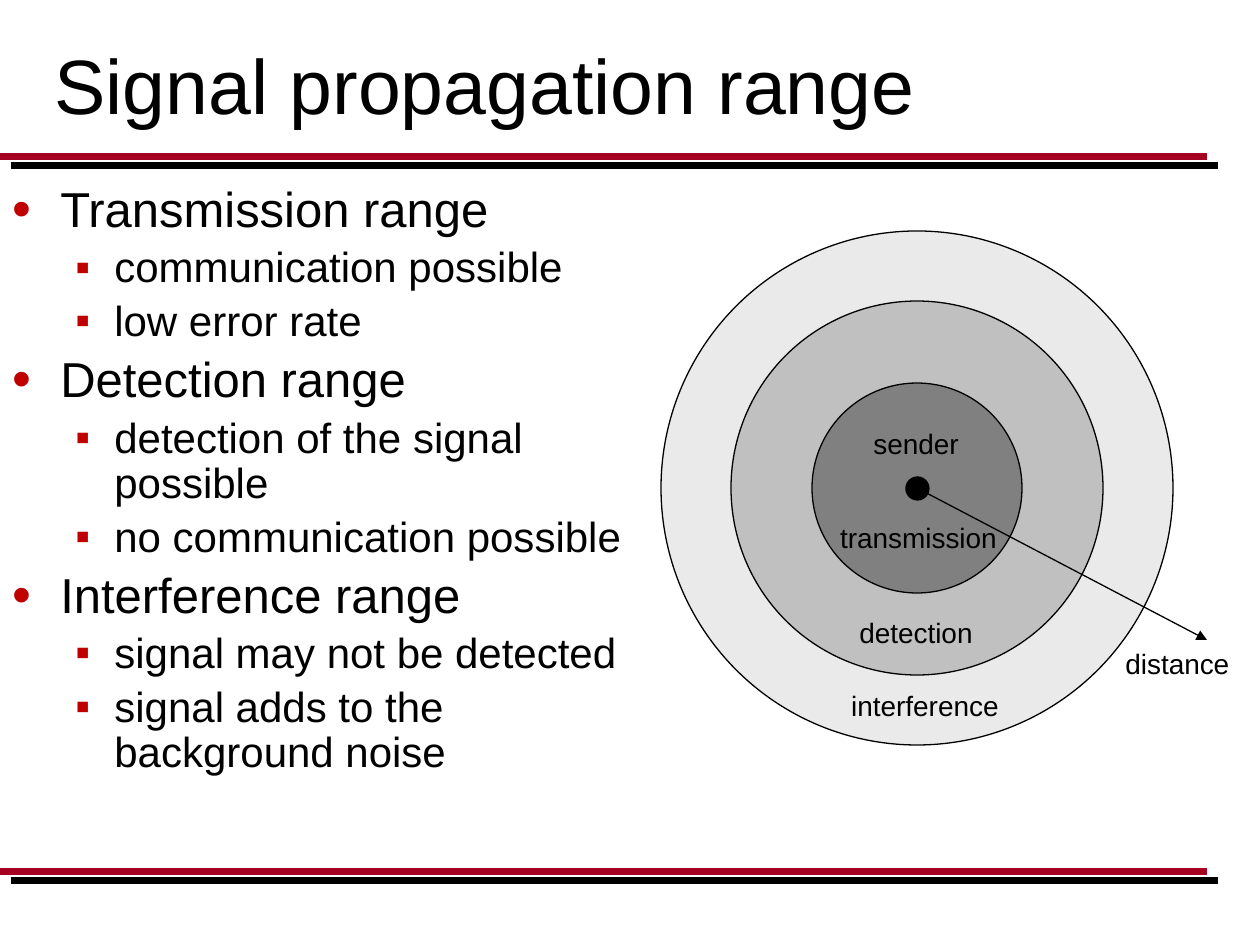
import pptx
import pptx.util
import pptx.dml.color
import pptx.enum.shapes
import pptx.enum.text
import pptx.oxml.ns
from dataclasses import dataclass
from lxml import etree

PX = 914400 // 126  # EMU per px
A = pptx.oxml.ns.nsdecls("a")
ALIGN = pptx.enum.text.PP_ALIGN
ANCHOR = pptx.enum.text.MSO_ANCHOR


@dataclass(frozen=True)
class Theme:
    font: str = "Arial"
    ink: str = "000000"
    rule: str = "A50021"
    bullet: str = "C00000"
    interference: str = "EAEAEA"
    detection: str = "C0C0C0"
    transmission: str = "808080"
    title: int = 44
    topic: int = 28
    point: int = 24
    label: int = 16
    rule_width: float = 4
    thin: float = 0.75


T = Theme()

TOPICS = [
    ("Transmission range", ["communication possible", "low error rate"]),
    ("Detection range", ["detection of the signal possible", "no communication possible"]),
    ("Interference range", ["signal may not be detected", "signal adds to the background noise"]),
]


def px(*values):
    return [pptx.util.Emu(v * PX) for v in values]


def rgb(color):
    return pptx.dml.color.RGBColor.from_string(color)


def style(p, size):
    for r in p.runs:
        r.font.name = T.font
        r.font.size = pptx.util.Pt(size)
        r.font.color.rgb = rgb(T.ink)


def add_box(slide, box, anchor=ANCHOR.TOP):
    tf = slide.shapes.add_textbox(*px(*box)).text_frame
    tf.word_wrap = True
    tf.vertical_anchor = anchor
    return tf


def add_text(slide, text, box, size, align=ALIGN.LEFT, anchor=ANCHOR.TOP):
    p = add_box(slide, box, anchor).paragraphs[0]
    p.text = text
    p.alignment = align
    style(p, size)


def add_bullet(p, char, percent, margin, hanging):
    pPr = p._p.get_or_add_pPr()
    left, indent = px(margin, -hanging)
    pPr.set("marL", str(left))
    pPr.set("indent", str(indent))
    for xml in (
        f'<a:buClr {A}><a:srgbClr val="{T.bullet}"/></a:buClr>',
        f'<a:buSzPct {A} val="{percent * 1000}"/>',
        f'<a:buFont {A} typeface="{T.font}"/>',
        f'<a:buChar {A} char="{char}"/>',
    ):
        pPr.append(etree.fromstring(xml))


def add_outline(slide, box):
    tf = add_box(slide, box)
    rows = []
    for topic, points in TOPICS:
        rows.append((0, topic))
        rows += [(1, point) for point in points]
    for i, (level, text) in enumerate(rows):
        p = tf.paragraphs[0] if i == 0 else tf.add_paragraph()
        p.text = text
        p.level = level
        if level == 0:
            add_bullet(p, "•", 110, 48, 48)
        else:
            add_bullet(p, "▪", 100, 102, 39)
        size = T.point if level else T.topic
        p.line_spacing = 0.9
        p.space_before = pptx.util.Pt(round(size * 0.2, 1) if i else 0)
        style(p, size)


def add_line(slide, start, end, color, width, arrow=False):
    kind = pptx.enum.shapes.MSO_CONNECTOR.STRAIGHT
    c = slide.shapes.add_connector(kind, *px(*start, *end))
    c.line.color.rgb = rgb(color)
    c.line.width = pptx.util.Pt(width)
    if arrow:
        ln = c.line._get_or_add_ln()
        ln.append(etree.fromstring(f'<a:tailEnd {A} type="triangle"/>'))
    c._element.spPr.append(etree.fromstring(f"<a:effectLst {A}/>"))


def add_double_rule(slide, y):
    # Black line behind, set off to the lower right of the red one
    for dx, dy, color in ((11, 9, T.ink), (0, 0, T.rule)):
        add_line(slide, (dx, y + dy), (1207 + dx, y + dy), color, T.rule_width)


def add_ring(slide, center, width, height, fill):
    x, y = center
    box = px(x - width // 2, y - height // 2, width, height)
    s = slide.shapes.add_shape(pptx.enum.shapes.MSO_SHAPE.OVAL, *box)
    s.shadow.inherit = False
    s.fill.solid()
    s.fill.fore_color.rgb = rgb(fill)
    s.line.color.rgb = rgb(T.ink)
    s.line.width = pptx.util.Pt(T.thin)


def add_range_diagram(slide):
    center = (917, 488)
    for width, height, fill in (
        (512, 514, T.interference),
        (372, 374, T.detection),
        (210, 210, T.transmission),
        (23, 23, T.ink),
    ):
        add_ring(slide, center, width, height, fill)
    add_line(slide, center, (1207, 640), T.ink, T.thin, arrow=True)
    for text, box, align in (
        ("distance", (1113, 640, 147, 53), ALIGN.LEFT),
        ("transmission", (819, 514, 199, 42), ALIGN.CENTER),
        ("detection", (829, 609, 174, 49), ALIGN.CENTER),
        ("interference", (829, 682, 192, 42), ALIGN.CENTER),
        ("sender", (861, 420, 116, 53), ALIGN.LEFT),
    ):
        add_text(slide, text, box, T.label, align)


def main():
    prs = pptx.Presentation()
    prs.slide_width, prs.slide_height = pptx.util.Inches(10), pptx.util.Inches(7.5)
    slide = prs.slides.add_slide(prs.slide_layouts[6])

    # Frame and title
    for y in (157, 872):
        add_double_rule(slide, y)
    add_text(slide, "Signal propagation range", (42, 0, 1155, 168), T.title, anchor=ANCHOR.MIDDLE)

    # Ranges explained, then drawn
    add_outline(slide, (0, 179, 672, 665))
    add_range_diagram(slide)

    prs.save("out.pptx")


if __name__ == "__main__":
    main()
